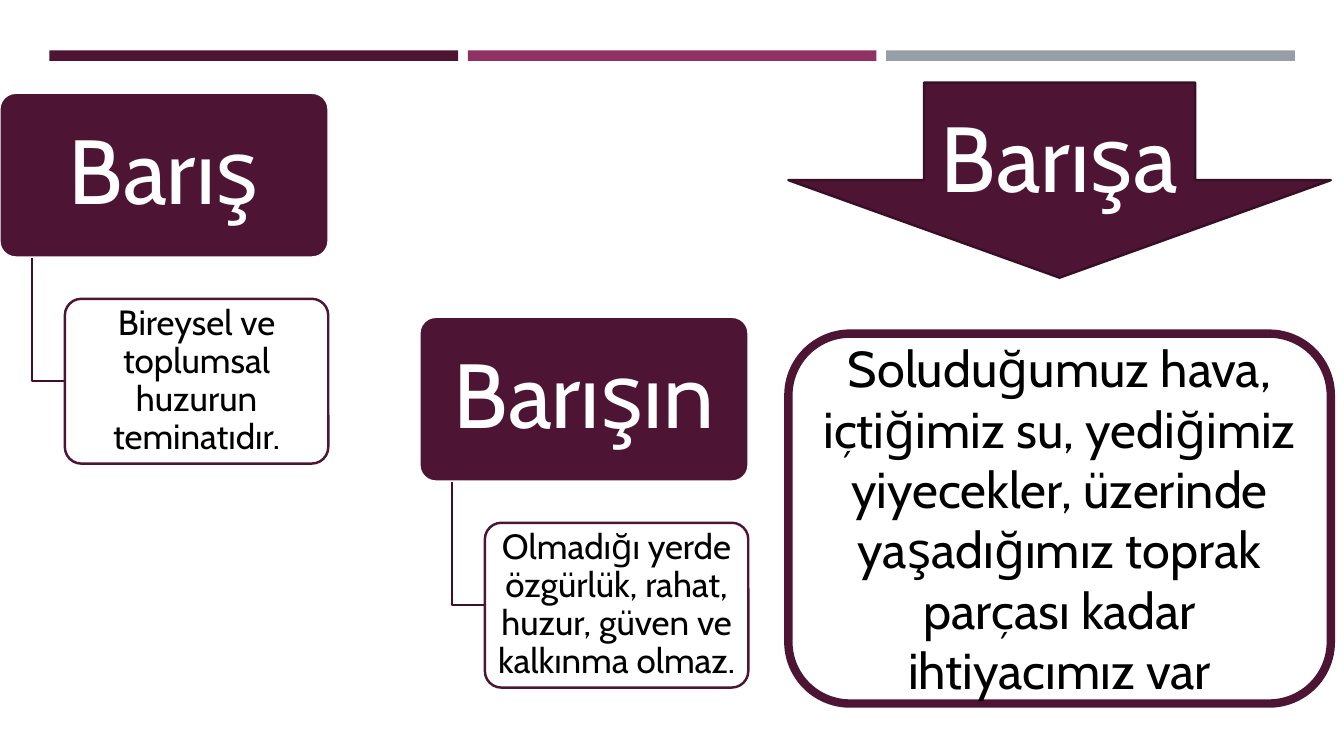
from lxml.etree import SubElement as Sub
from pptx import Presentation as Deck
from pptx.dml.color import RGBColor as Rgb
from pptx.enum.shapes import MSO_SHAPE as Kind
from pptx.enum.text import MSO_ANCHOR as Anchor, PP_ALIGN as Align
from pptx.oxml.ns import qn
from pptx.util import Inches, Pt

WIDE, HIGH = Inches(13.33), Inches(7.5)
PLUM = Rgb(0x4D, 0x14, 0x34)
DARK = Rgb(0x39, 0x0F, 0x26)
WIRE = Rgb(0x3E, 0x10, 0x2A)
ROSE = Rgb(0x90, 0x31, 0x63)
GRAY = Rgb(0x96, 0x9F, 0xA7)
WHITE = Rgb(0xFF, 0xFF, 0xFF)
BLACK = Rgb(0, 0, 0)
FONT = "Cabin"


def across(share):
    return round(WIDE * share / 100)


def down(share):
    return round(HIGH * share / 100)


def assign(item, values):
    for key, value in values.items():
        setattr(item, key, value)


def outline(shape, color, width):
    shape.line.color.rgb = color
    shape.line.width = Pt(width)


def block(slide, kind, box, fill, line=None, width=1.75):
    x, y, w, h = box
    shape = slide.shapes.add_shape(kind, across(x), down(y), across(w), down(h))
    shape.shadow.inherit = False
    shape.fill.solid()
    shape.fill.fore_color.rgb = fill
    if line is None:
        shape.line.fill.background()
    else:
        outline(shape, line, width)
    return shape


def label(shape, words, size, color, pad=(0.1, 0.05), lead=1.0, wrap=True):
    side, edge = map(Inches, pad)
    frame = shape.text_frame
    assign(frame, {"word_wrap": wrap, "vertical_anchor": Anchor.MIDDLE,
                   "margin_left": side, "margin_right": side,
                   "margin_top": edge, "margin_bottom": edge})
    para = frame.paragraphs[0]
    assign(para, {"alignment": Align.CENTER, "line_spacing": lead})
    run = para.add_run()
    run.text = words
    assign(run.font, {"name": FONT, "size": Pt(size)})
    run.font.color.rgb = color


def fade(shape, share):
    color = shape.element.spPr.find(".//" + qn("a:srgbClr"))
    Sub(color, qn("a:alpha")).set("val", str(share * 1000))


def elbow(slide, x, top, end, base):
    build = slide.shapes.build_freeform(across(x), down(top))
    build.add_line_segments([(across(x), down(base)), (across(end), down(base))],
                            close=False)
    shape = build.convert_to_shape()
    shape.shadow.inherit = False
    shape.fill.background()
    outline(shape, WIRE, 1.75)


def branch(slide, x, y, title, detail):
    tall = 21.8
    head = block(slide, Kind.ROUNDED_RECTANGLE, (x, y, 24.5, tall), PLUM, WHITE)
    label(head, title, 65, WHITE, (0.14, 0.09), 0.9)
    leaf_x, leaf_y = x + 4.88, y + tall * 1.25
    elbow(slide, x + 2.44, y + tall, leaf_x, leaf_y + tall / 2)
    leaf = block(slide, Kind.ROUNDED_RECTANGLE, (leaf_x, leaf_y, 19.6, tall),
                 WHITE, PLUM)
    label(leaf, detail, 25, BLACK, (0.05, 0.03), 0.9)
    fade(leaf, 90)
    for card in (head, leaf):
        card.adjustments[0] = 0.1


def main():
    deck = Deck()
    assign(deck, {"slide_width": WIDE, "slide_height": HIGH})
    slide = deck.slides.add_slide(deck.slide_layouts[6])

    for col, color in enumerate((PLUM, ROSE, GRAY)):
        block(slide, Kind.RECTANGLE, (3.68 + 31.13 * col, 6.67, 30.4, 1.4), color)

    arrow = block(slide, Kind.DOWN_ARROW, (58.66, 10.93, 40.36, 25.8), PLUM, DARK)
    label(arrow, "Barışa", 66, WHITE, wrap=False)
    needs = block(slide, Kind.ROUNDED_RECTANGLE, (58.66, 44.13, 40.36, 48.93),
                  WHITE, PLUM, 6)
    label(needs, "Soluduğumuz hava, içtiğimiz su, yediğimiz yiyecekler, "
          "üzerinde yaşadığımız toprak parçası kadar ihtiyacımız var", 36, BLACK)

    branch(slide, -0.05, 12.27, "Barış",
           "Bireysel ve toplumsal huzurun teminatıdır.")
    branch(slide, 31.2, 41.9, "Barışın",
           "Olmadığı yerde özgürlük, rahat, huzur, güven ve kalkınma olmaz.")
    deck.save("out.pptx")


if __name__ == "__main__":
    main()
